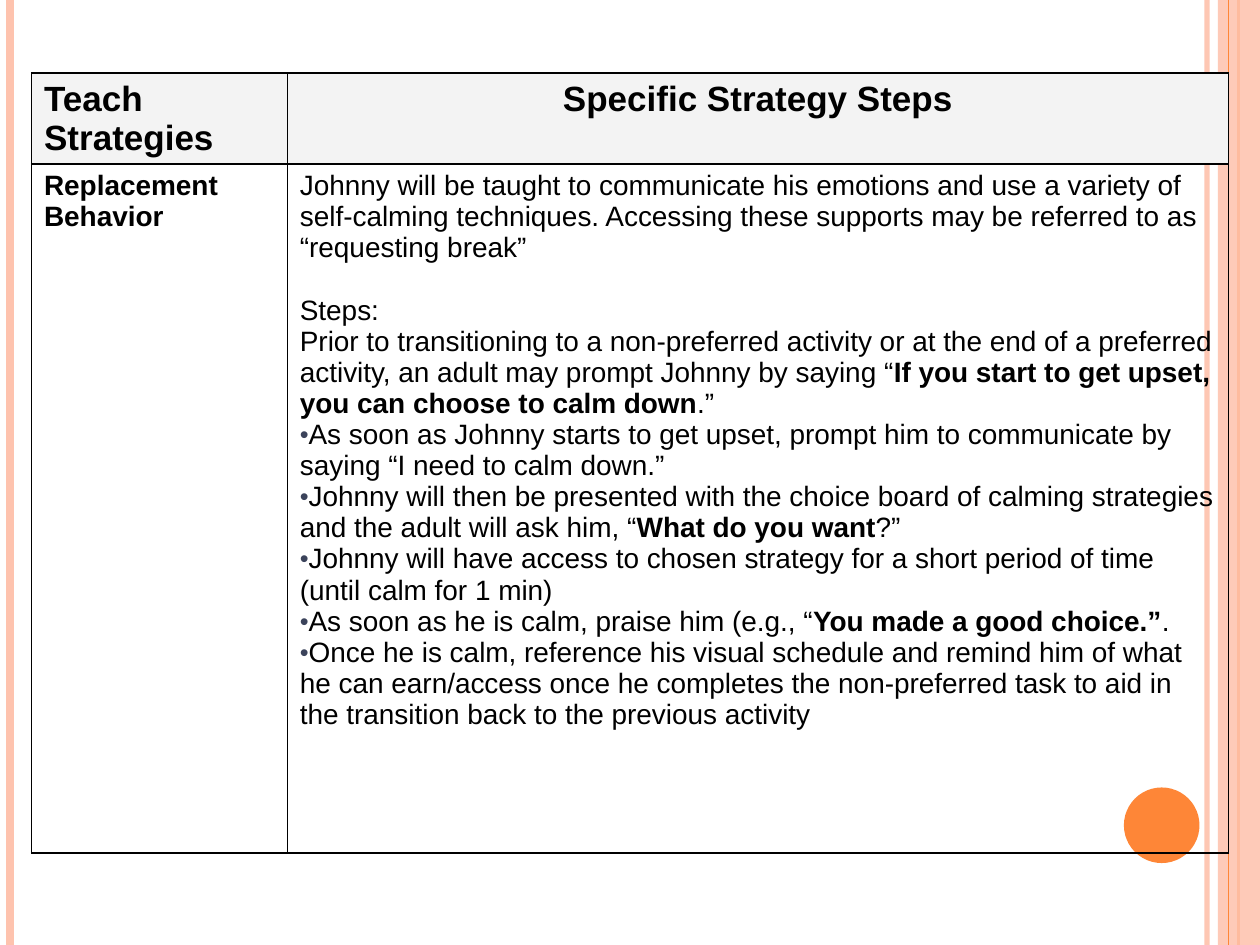
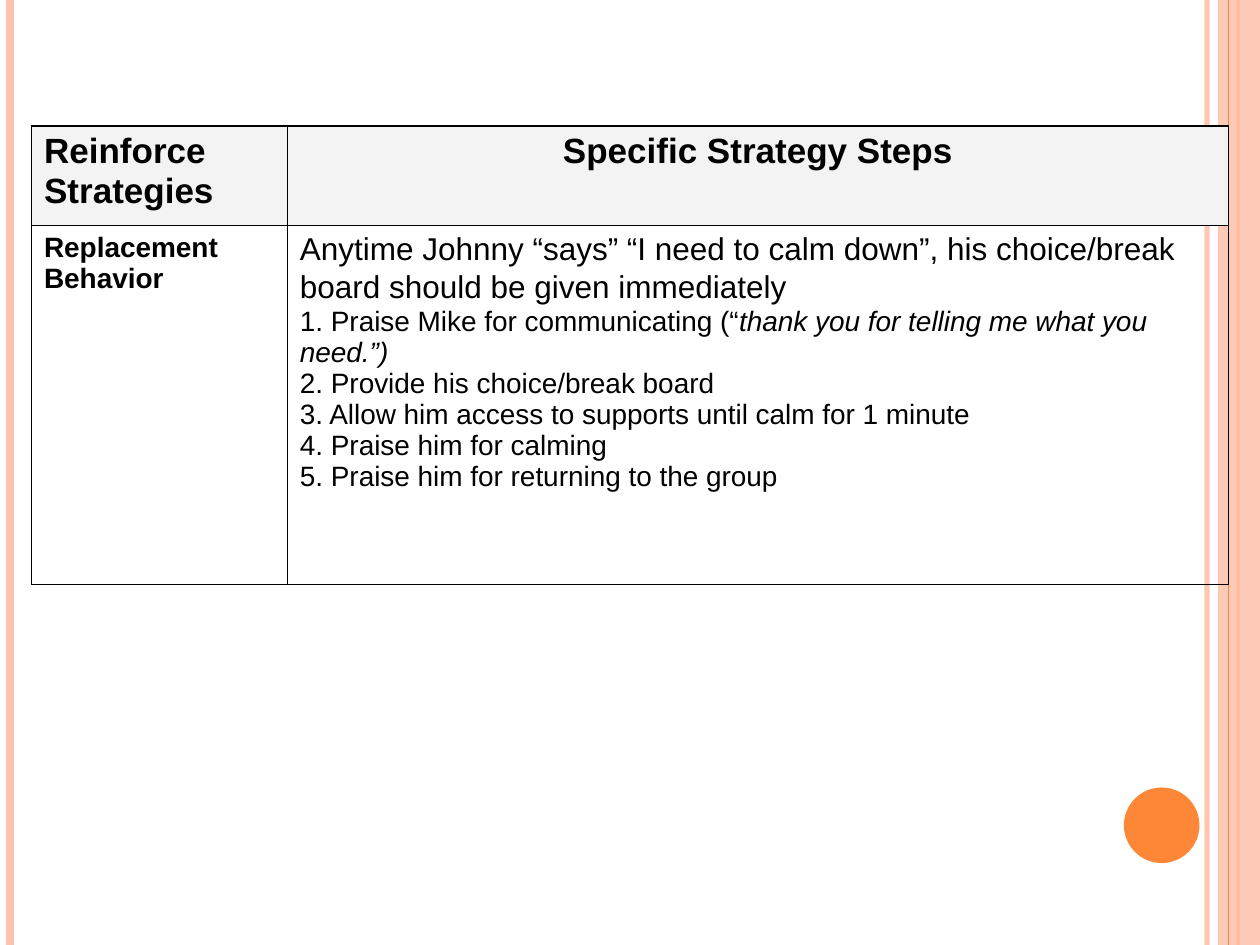
from lxml import etree
from pptx import Presentation
from pptx.dml.color import RGBColor
from pptx.enum.shapes import MSO_CONNECTOR, MSO_SHAPE
from pptx.enum.text import PP_ALIGN
from pptx.oxml.ns import qn
from pptx.util import Inches, Pt

RECT, OVAL = MSO_SHAPE.RECTANGLE, MSO_SHAPE.OVAL
STRAIGHT = MSO_CONNECTOR.STRAIGHT
CENTER = PP_ALIGN.CENTER

PEACH = RGBColor(0xFE, 0xC3, 0xAE)
ORANGE = RGBColor(0xFE, 0x86, 0x37)
HEADER_GREY = RGBColor(0xF3, 0xF3, 0xF3)
SLATE = RGBColor(0x3B, 0x43, 0x5B)
BLACK = RGBColor(0, 0, 0)

FONT = "Arial"
W, H = Inches(10), Inches(7.5)
TABLE_LEFT = Inches(0.25)
COLUMNS = (Inches(2.03), Inches(7.47))
BOLD, ITALIC = {"bold": True}, {"italic": True}
HEADING = {"size": Pt(20), "bold": True}
LABEL = {"size": Pt(16), "bold": True}
BODY = {"size": Pt(16), "bold": False, "italic": False}
LEAD = {"size": Pt(18)}


def sub(parent, tag, **attrs):
    return etree.SubElement(parent, qn(tag), attrs)


def set_alpha(element, percent):
    color = next(element.iter(qn("a:srgbClr")))
    sub(color, "a:alpha", val=str(percent * 1000))


def add_stripe(s, x, width, color, alpha=None):
    """Full-height vertical line at x inches."""
    c = s.shapes.add_connector(STRAIGHT, Inches(x), 0, Inches(x), H)
    c.line.color.rgb = color
    c.line.width = Pt(width)
    if alpha:
        set_alpha(c.line._get_or_add_ln(), alpha)
    sub(c._element.spPr, "a:effectLst")


def add_solid(s, kind, left, top, width, height, color, alpha=None):
    sp = s.shapes.add_shape(kind, left, top, width, height)
    sp.shadow.inherit = False
    sp.fill.solid()
    sp.fill.fore_color.rgb = color
    sp.line.fill.background()
    if alpha:
        set_alpha(sp._element.spPr, alpha)


def add_frame(s):
    """Stripes, side band and disc shared by every slide."""
    add_stripe(s, 9.58, 3, PEACH, 93)
    add_stripe(s, 0.08, 4.5, PEACH)
    add_stripe(s, 9.83, 1.5, ORANGE)
    band = W // 30
    add_solid(s, RECT, W - band, 0, band, H, PEACH, 87)
    add_stripe(s, 9.75, 0.75, ORANGE)
    disc = Inches(0.6)
    add_solid(s, OVAL, Inches(8.92), Inches(6.25), disc, disc, ORANGE)


def set_bullet(p):
    pPr = p._p.get_or_add_pPr()
    pPr.set("marL", "0")
    pPr.set("indent", "0")
    sub(sub(pPr, "a:buClr"), "a:srgbClr", val=str(SLATE))
    sub(pPr, "a:buSzPct", val="90000")
    sub(pPr, "a:buFont", typeface=FONT)
    sub(pPr, "a:buChar", char="•")


def fill_paragraph(p, runs, base):
    """Each run is plain text or a (text, format) pair."""
    for run in runs:
        text, fmt = (run, {}) if isinstance(run, str) else run
        r = p.add_run()
        r.text = text
        r.font.name = FONT
        r.font.color.rgb = BLACK
        for name, value in {**base, **fmt}.items():
            setattr(r.font, name, value)


def style_cell(cell, fill=None):
    tcPr = cell._tc.get_or_add_tcPr()
    for side in ("a:lnL", "a:lnR", "a:lnT", "a:lnB"):
        ln = sub(tcPr, side, w=str(Pt(1)))
        sub(sub(ln, "a:solidFill"), "a:srgbClr", val=str(BLACK))
    if fill is None:
        cell.fill.background()
    else:
        cell.fill.solid()
        cell.fill.fore_color.rgb = fill


def add_strategy_table(s, top, rows, title, steps):
    """Header row, then the behavior and its steps as (runs, options)."""
    frame = s.shapes.add_table(2, 2, TABLE_LEFT, Inches(top),
                               sum(COLUMNS), Inches(sum(rows)))
    table = frame.table
    table.first_row = table.horz_banding = False
    for column, width in zip(table.columns, COLUMNS):
        column.width = width
    for row, height, fill in zip(table.rows, rows, (HEADER_GREY, None)):
        row.height = Inches(height)
        for cell in row.cells:
            style_cell(cell, fill)

    labels = ((0, 0, title, HEADING),
              (0, 1, "Specific Strategy Steps", HEADING),
              (1, 0, "Replacement Behavior", LABEL))
    for row, col, text, fmt in labels:
        fill_paragraph(table.cell(row, col).text_frame.paragraphs[0], [text], fmt)
    table.cell(0, 1).text_frame.paragraphs[0].alignment = CENTER

    tf = table.cell(1, 1).text_frame
    for i, (runs, options) in enumerate(steps):
        p = tf.add_paragraph() if i else tf.paragraphs[0]
        if "before" in options:
            p.space_before = Pt(options["before"])
        if options.get("bullet"):
            set_bullet(p)
        fill_paragraph(p, runs, BODY)


BULLET = {"bullet": True}

TEACH_STEPS = [
    (["Johnny will be taught to communicate his emotions and use a variety of "
      "self-calming techniques. Accessing these supports may be referred to as "
      "“requesting break”"], {}),
    (["Steps:"], {"before": 18}),
    (["Prior to transitioning to a non-preferred activity or at the end of a "
      "preferred activity, an adult may prompt Johnny by saying “",
      ("If you start to get upset, you can choose to calm down", BOLD), ".”"], {}),
    (["As soon as Johnny starts to get upset, prompt him to communicate by "
      "saying “I need to calm down.”"], BULLET),
    (["Johnny will then be presented with the choice board of calming strategies "
      "and the adult will ask him, “", ("What do you want", BOLD), "?”"], BULLET),
    (["Johnny will have access to chosen strategy for a short period of time "
      "(until calm for 1 min)"], BULLET),
    (["As soon as he is calm, praise him (e.g., “",
      ("You made a good choice.”", BOLD), "."], BULLET),
    (["Once he is calm, reference his visual schedule and remind him of what he "
      "can earn/access once he completes the non-preferred task to aid in the "
      "transition back to the previous activity"], BULLET),
]

REINFORCE_STEPS = [
    ([("Anytime Johnny “says” “I need to calm down”, his choice/break board "
       "should be given immediately", LEAD), (" ", {"size": Pt(20)})], {}),
    (["1. Praise Mike for communicating (“",
      ("thank you for telling me what you need.”)", ITALIC)], {}),
    (["2. Provide his choice/break board"], {}),
    (["3. Allow him access to supports until calm for 1 minute"], {}),
    (["4. Praise him for calming"], {}),
    (["5. Praise him for returning to the group"], {}),
]

# Table top and row heights in inches, title, steps
SLIDES = (
    (0.58, (0.69, 5.47), "Teach Strategies", TEACH_STEPS),
    (1, (0.79, 2.85), "Reinforce Strategies", REINFORCE_STEPS),
)


def main():
    prs = Presentation()
    prs.slide_width, prs.slide_height = W, H
    for content in SLIDES:
        s = prs.slides.add_slide(prs.slide_layouts[6])
        add_frame(s)
        add_strategy_table(s, *content)
    prs.save("out.pptx")


if __name__ == "__main__":
    main()
